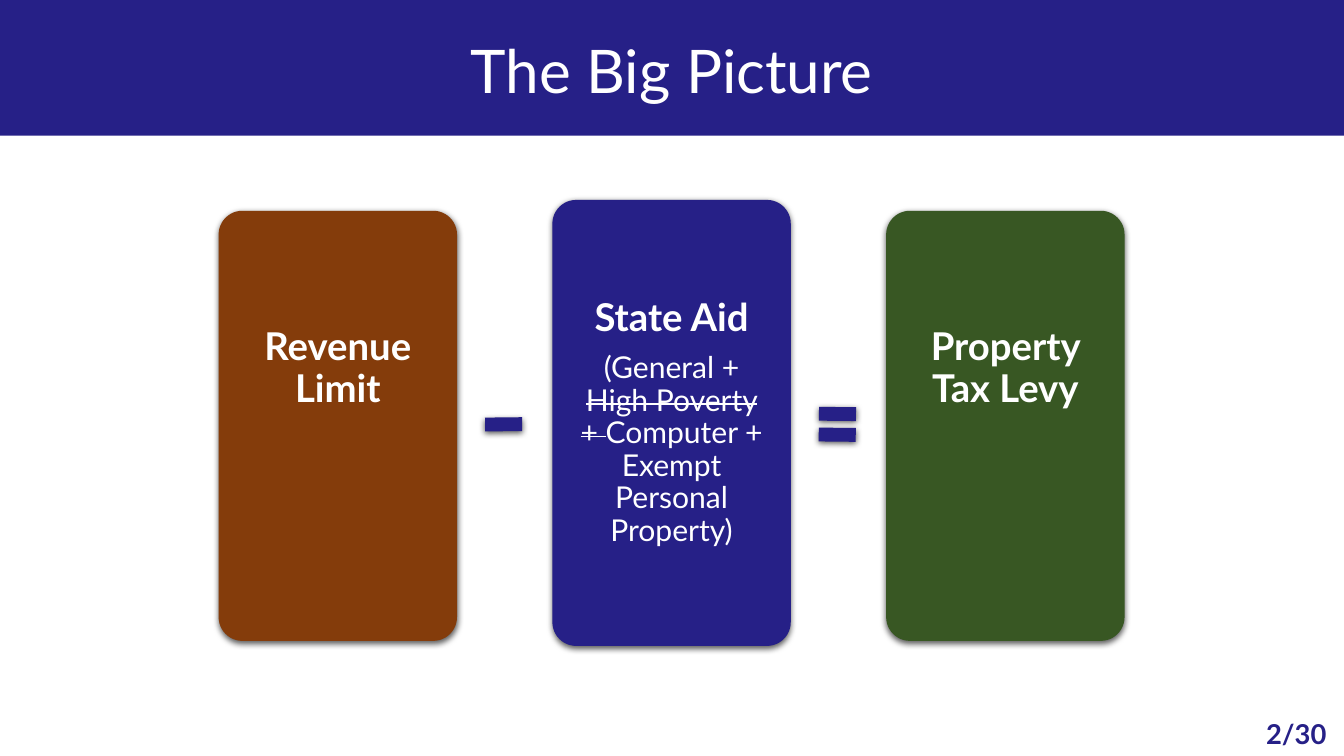
from lxml import etree
from pptx import Presentation
from pptx.dml.color import RGBColor
from pptx.enum import shapes, text
from pptx.oxml import ns
from pptx.util import Cm, Pt

NAVY = RGBColor(0x26, 0x20, 0x87)
BROWN = RGBColor(0x84, 0x3C, 0x0B)
GREEN = RGBColor(0x38, 0x57, 0x23)
WHITE = RGBColor(0xFF, 0xFF, 0xFF)
MSO = shapes.MSO_SHAPE


def add_shape(kind, left, top, width, height, color):
    sp = s.shapes.add_shape(kind, Cm(left), Cm(top), Cm(width), Cm(height))
    sp.fill.solid()
    sp.fill.fore_color.rgb = color
    sp.line.fill.background()
    sp.shadow.inherit = False
    return sp


def add_shadow(effects, blur, dist, angle, alpha):
    shadow = etree.SubElement(effects, ns.qn("a:outerShdw"), blurRad=str(Pt(blur)),
                              dist=str(Pt(dist)), dir=str(angle * 60000),
                              algn="ctr", rotWithShape="0")
    black = etree.SubElement(shadow, ns.qn("a:srgbClr"), val="000000")
    etree.SubElement(black, ns.qn("a:alpha"), val=str(alpha * 1000))


prs = Presentation()
prs.slide_width, prs.slide_height = Cm(34.67), Cm(19.51)
s = prs.slides.add_slide(prs.slide_layouts[5])

band = add_shape(MSO.RECTANGLE, 0, 0, 34.67, 3.5, NAVY)
s.shapes._spTree.insert(2, band._element)

title = s.shapes.title
title.left, title.top, title.width, title.height = Cm(0), Cm(0), Cm(34.67), Cm(3.58)
tf = title.text_frame
tf.vertical_anchor = text.MSO_ANCHOR.MIDDLE
p = tf.paragraphs[0]
p.alignment = text.PP_ALIGN.CENTER
p.space_after = Pt(6)
r = p.add_run()
r.text = "The Big Picture"
p.font.name, p.font.size, p.font.color.rgb = "Lato", Pt(44), WHITE
effects = etree.SubElement(r._r.get_or_add_rPr(), ns.qn("a:effectLst"))
add_shadow(effects, 3, 3, 45, 43)

heading = (28, True)
detail = (22, False)
cards = [
    (BROWN, 5.44, 11.1, 3.4, [(heading, ["Revenue Limit"])]),
    (NAVY, 5.16, 11.51, 0.48, [
        (heading, ["State Aid"]),
        (detail, ["(General + ", "High Poverty + ", "Computer + Exempt Personal Property)"]),
    ]),
    (GREEN, 5.44, 11.1, 3.4, [(heading, ["Property Tax Levy"])]),
]
pitch = 8.61
for i, (color, top, height, bottom, paragraphs) in enumerate(cards):
    card = add_shape(MSO.ROUNDED_RECTANGLE, 5.64 + i * pitch, top, 6.15, height, color)
    card.adjustments[0] = 0.1
    add_shadow(card._element.spPr.find(ns.qn("a:effectLst")), 4.5, 1.5, 90, 63)
    tf = card.text_frame
    tf.word_wrap = True
    tf.vertical_anchor = text.MSO_ANCHOR.MIDDLE
    tf.margin_left = tf.margin_right = tf.margin_top = Cm(0.48)
    tf.margin_bottom = Cm(bottom)
    for j, ((size, bold), runs) in enumerate(paragraphs):
        p = tf.add_paragraph() if j else tf.paragraphs[0]
        p.alignment = text.PP_ALIGN.CENTER
        p.line_spacing = 0.9
        p.space_before = Pt(10 * j)
        p.font.name, p.font.size, p.font.bold = "Lato", Pt(size), bold
        p.font.color.rgb = WHITE
        for words in runs:
            r = p.add_run()
            r.text = words
            if words.startswith("High Poverty"):
                r._r.get_or_add_rPr().set("strike", "sngStrike")

operators = [(MSO.MATH_MINUS, 179.4), (MSO.MATH_EQUAL, 180.6)]
for i, (kind, angle) in enumerate(operators):
    sign = add_shape(kind, 12.34 + i * pitch, 10.19, 1.3, 1.52, NAVY)
    sign.rotation = angle
    add_shadow(sign._element.spPr.find(ns.qn("a:effectLst")), 4.5, 1.5, 90, 63)

page = s.shapes.add_textbox(Cm(32.21), Cm(18.39), Cm(2.46), Cm(1.12))
tf = page.text_frame
tf.word_wrap = True
p = tf.paragraphs[0]
p.text = "2/30"
p.alignment = text.PP_ALIGN.CENTER
p.font.name, p.font.size, p.font.bold = "Lato", Pt(20), True
p.font.color.rgb = NAVY

prs.save("out.pptx")
